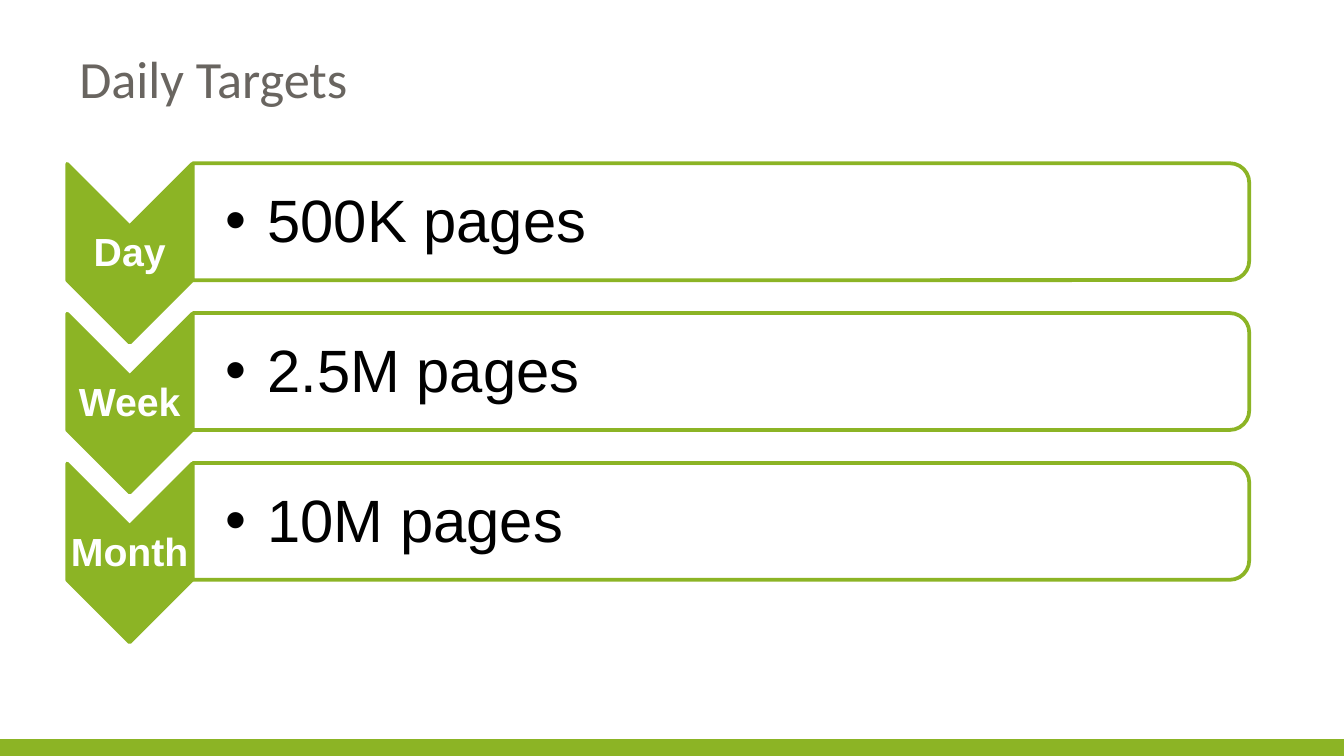
from dataclasses import dataclass

from lxml.etree import SubElement
from pptx import Presentation
from pptx.dml.color import RGBColor
from pptx.enum.shapes import MSO_SHAPE
from pptx.enum.text import MSO_ANCHOR, PP_ALIGN
from pptx.oxml.ns import qn
from pptx.util import Inches, Pt


@dataclass(frozen=True)
class Theme:
    green: str = "8CB425"
    white: str = "FFFFFF"
    black: str = "000000"
    gray: str = "696560"
    head: str = "Calibri"
    body: str = "Arial"
    title: int = 28
    label: int = 21
    item: int = 32


class Page:
    def __init__(self, slide, theme):
        self.slide = slide
        self.theme = theme

    def shape(self, kind, box, fill, line=None, turn=0):
        item = self.slide.shapes.add_shape(kind, *map(Inches, box))
        item.shadow.inherit = False
        item.rotation = turn
        item.fill.solid()
        item.fill.fore_color.rgb = RGBColor.from_string(fill)
        if line:
            item.line.color.rgb = RGBColor.from_string(line)
            item.line.width = Pt(2)
        else:
            item.line.fill.background()
        return item

    def text(self, words, box, pads, font, size, color, bold=False,
             align=PP_ALIGN.LEFT, anchor=MSO_ANCHOR.MIDDLE, bullet=False):
        frame = self.slide.shapes.add_textbox(*map(Inches, box)).text_frame
        frame.word_wrap = True
        frame.vertical_anchor = anchor
        (frame.margin_left, frame.margin_top,
         frame.margin_right, frame.margin_bottom) = map(Inches, pads)
        para = frame.paragraphs[0]
        para.text = words
        para.alignment = align
        para.line_spacing = 0.9
        if bullet:
            self.bullet(para)
        para.font.name = font
        para.font.size = Pt(size)
        para.font.bold = bold
        para.font.color.rgb = RGBColor.from_string(color)

    def bullet(self, para):
        para.level = 1
        props = para._p.get_or_add_pPr()
        props.set("marL", str(Inches(0.31)))
        props.set("indent", str(-Inches(0.31)))
        SubElement(props, qn("a:buFont"), typeface=self.theme.body)
        SubElement(props, qn("a:buChar"), char="•")

    def title(self, words):
        look = self.theme
        self.text(words, (0.5, 0.36, 8.81, 0.86), (0.09, 0.04, 0.09, 0.04),
                  look.head, look.title, look.gray, anchor=MSO_ANCHOR.TOP)

    def target(self, top, name, goal):
        look = self.theme
        self.shape(MSO_SHAPE.CHEVRON, (0.3, top + 0.2, 1.33, 0.93),
                   look.green, look.green, 90)
        self.text(name, (0.5, top + 0.47, 0.93, 0.4), (0.01,) * 4,
                  look.body, look.label, look.white, True, PP_ALIGN.CENTER)
        panel = self.shape(MSO_SHAPE.ROUND_2_SAME_RECTANGLE,
                           (4.93, top - 3.5, 0.87, 7.86),
                           look.white, look.green, 90)
        shade = panel.fill._xPr.find(qn("a:solidFill"))[0]
        SubElement(shade, qn("a:alpha"), val="90000")
        self.text(goal, (1.43, top + 0.05, 7.82, 0.78),
                  (0.25, 0.02, 0.02, 0.02), look.body, look.item,
                  look.black, bullet=True)


def main():
    deck = Presentation()
    deck.slide_width = Inches(10)
    deck.slide_height = Inches(10 * 9 / 16)
    page = Page(deck.slides.add_slide(deck.slide_layouts[6]), Theme())
    page.shape(MSO_SHAPE.RECTANGLE, (0, 5.5, 10, 1 / 8), page.theme.green)
    goals = (("Day", "500K pages"), ("Week", "2.5M pages"),
             ("Month", "10M pages"))
    for row, (name, goal) in enumerate(goals):
        page.target(1.22 + row * 2.23 / 2, name, goal)
    page.title("Daily Targets")
    deck.save("out.pptx")


if __name__ == "__main__":
    main()
